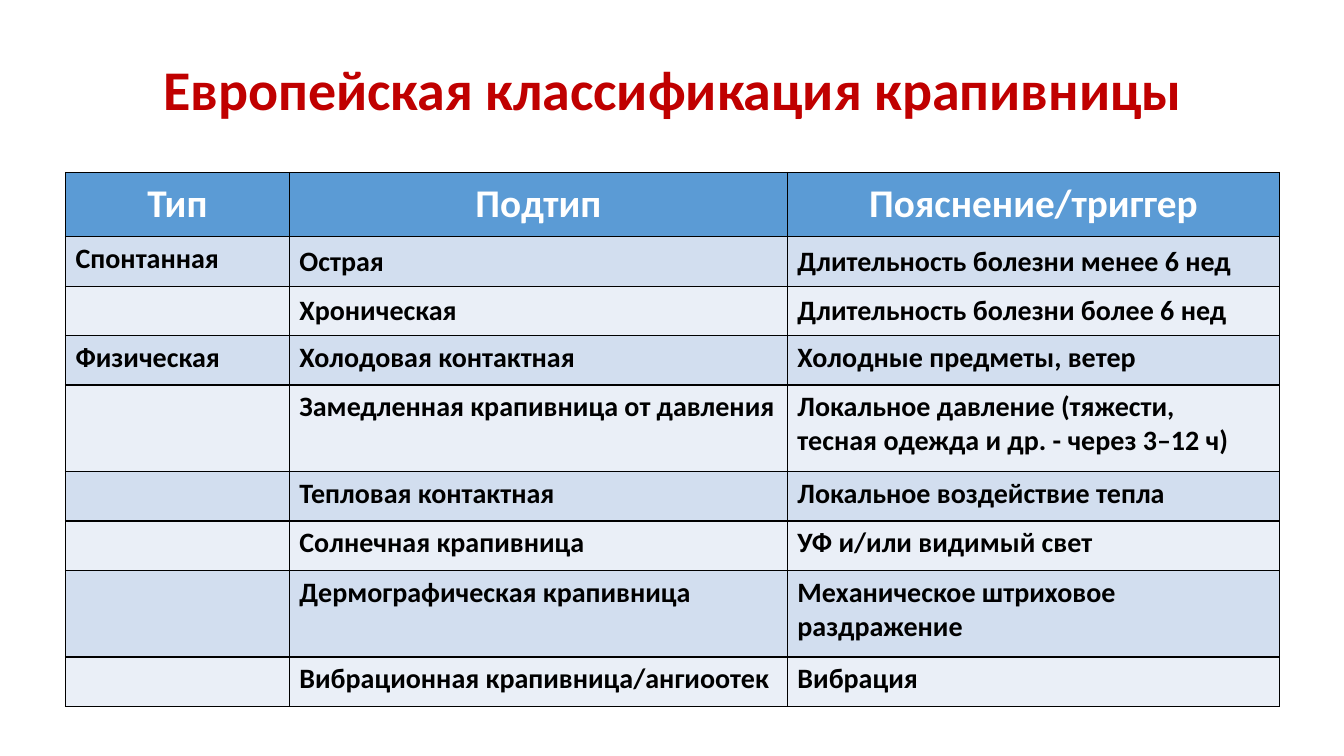
"""Slide with the European classification of urticaria as a table."""
from lxml.etree import SubElement
from pptx import Presentation
from pptx.dml.color import RGBColor as RGB
from pptx.enum.text import MSO_ANCHOR as ANCHOR, MSO_AUTO_SIZE as AUTOSIZE, PP_ALIGN as ALIGN
from pptx.oxml.ns import qn
from pptx.util import Inches, Pt

COLORS = {"title": "C00000", "header": "5B9BD5", "odd": "D2DEEF", "even": "EAEFF7",
          "white": "FFFFFF", "text": "000000", "border": "000000"}
HEADER = ("Тип", "Подтип", "Пояснение/триггер")
SUBTYPES = [
    ("Спонтанная", "Острая", "Длительность болезни менее 6 нед"),
    ("", "Хроническая", "Длительность болезни более 6 нед"),
    ("Физическая", "Холодовая контактная", "Холодные предметы, ветер"),
    ("", "Замедленная крапивница от давления",
     "Локальное давление (тяжести,\nтесная одежда и др. - через 3–12 ч)"),
    ("", "Тепловая контактная", "Локальное воздействие тепла"),
    ("", "Солнечная крапивница", "УФ и/или видимый свет"),
    ("", "Дермографическая крапивница", "Механическое штриховое раздражение"),
    ("", "Вибрационная крапивница/ангиоотек", "Вибрация"),
]
COLUMN_WIDTHS = (2.22, 4.94, 4.88)
HEADER_HEIGHT, LINE_HEIGHT, DOUBLE_HEIGHT = 0.64, 0.49, 0.86
DOUBLE_ROWS = (4, 7)
SPONTANEOUS_ROWS = (1, 2)


def style_paragraph(paragraph, size, color, align):
    paragraph.alignment = align
    paragraph.font.name = "Calibri"
    paragraph.font.size = Pt(size)
    paragraph.font.bold = True
    paragraph.font.color.rgb = RGB.from_string(COLORS[color])


def add_borders(cell):
    properties = cell._tc.get_or_add_tcPr()
    for side in ("a:lnL", "a:lnR", "a:lnT", "a:lnB"):
        line = SubElement(properties, qn(side), w=str(Pt(1)))
        solid = SubElement(line, qn("a:solidFill"))
        SubElement(solid, qn("a:srgbClr"), val=COLORS["border"])


deck = Presentation()
deck.slide_width, deck.slide_height = Inches(13.33), Inches(7.5)
slide = deck.slides.add_slide(deck.slide_layouts[5])

heading = slide.shapes.title
heading.left, heading.top = Inches(0.92), Inches(0.52)
heading.width, heading.height = Inches(11.5), Inches(0.8)
heading.text_frame.text = "Европейская классификация крапивницы"
heading.text_frame.auto_size = AUTOSIZE.NONE
heading.text_frame.vertical_anchor = ANCHOR.MIDDLE
heading.text_frame.paragraphs[0].line_spacing = 0.9
style_paragraph(heading.text_frame.paragraphs[0], 40, "title", ALIGN.CENTER)

rows = [HEADER, *SUBTYPES]
heights = [HEADER_HEIGHT] + [DOUBLE_HEIGHT if number in DOUBLE_ROWS else LINE_HEIGHT
                             for number in range(1, len(rows))]
classification = slide.shapes.add_table(
    len(rows), len(HEADER), Inches(0.65), Inches(1.71),
    Inches(sum(COLUMN_WIDTHS)), Inches(sum(heights))).table
for column, width in zip(classification.columns, COLUMN_WIDTHS):
    column.width = Inches(width)

for number, (texts, height) in enumerate(zip(rows, heights)):
    classification.rows[number].height = Inches(height)
    is_header = number == 0
    band = "header" if is_header else "odd" if number % 2 else "even"
    size, color, align = (28, "white", ALIGN.CENTER) if is_header else (20, "text", ALIGN.LEFT)
    for position, text in enumerate(texts):
        cell = classification.cell(number, position)
        add_borders(cell)
        cell.fill.solid()
        cell.fill.fore_color.rgb = RGB.from_string(COLORS[band])
        centred = is_header or (number in SPONTANEOUS_ROWS and position > 0)
        cell.vertical_anchor = ANCHOR.MIDDLE if centred else ANCHOR.TOP
        cell.text_frame.text = text
        for paragraph in cell.text_frame.paragraphs:
            style_paragraph(paragraph, size, color, align)

deck.save("out.pptx")
